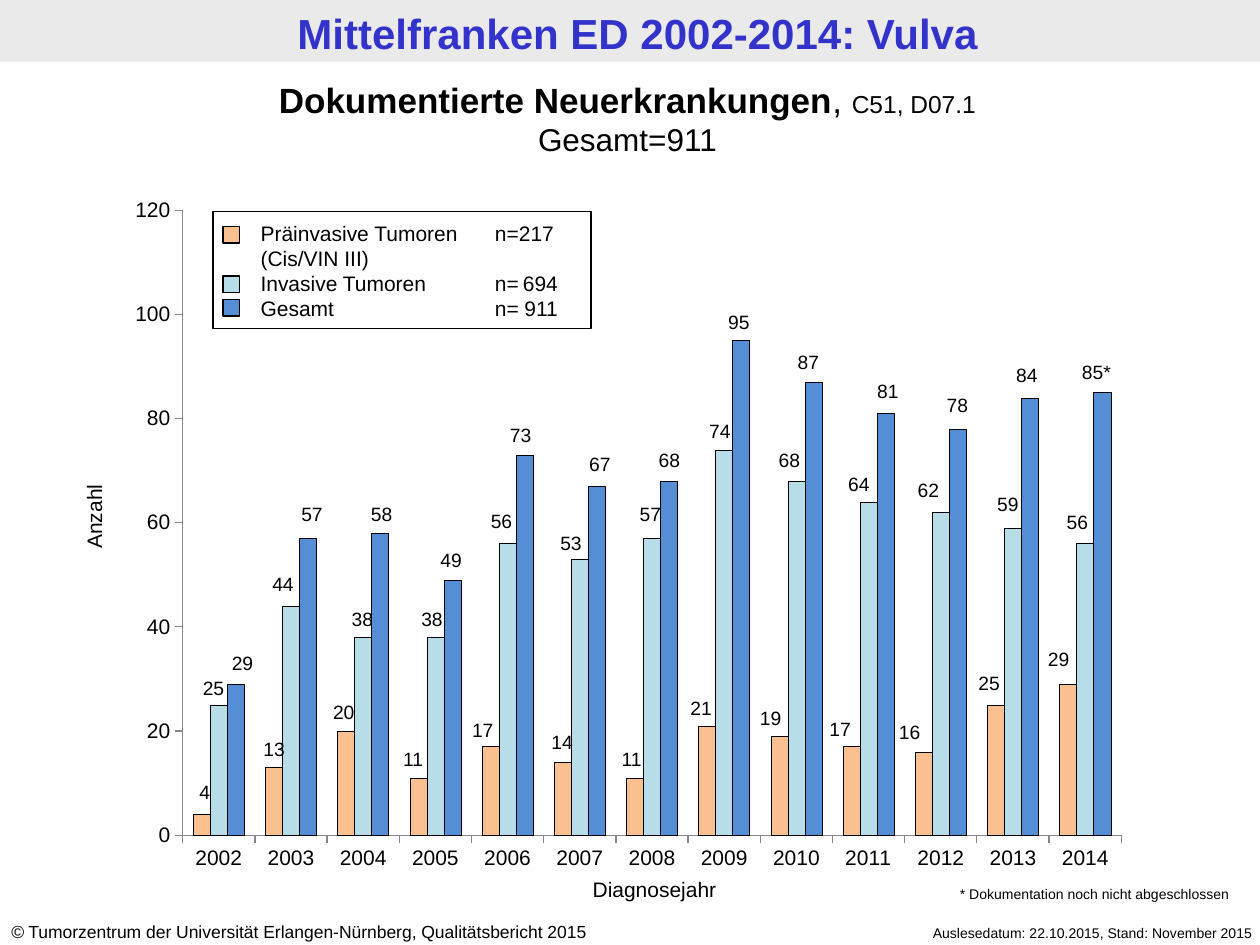
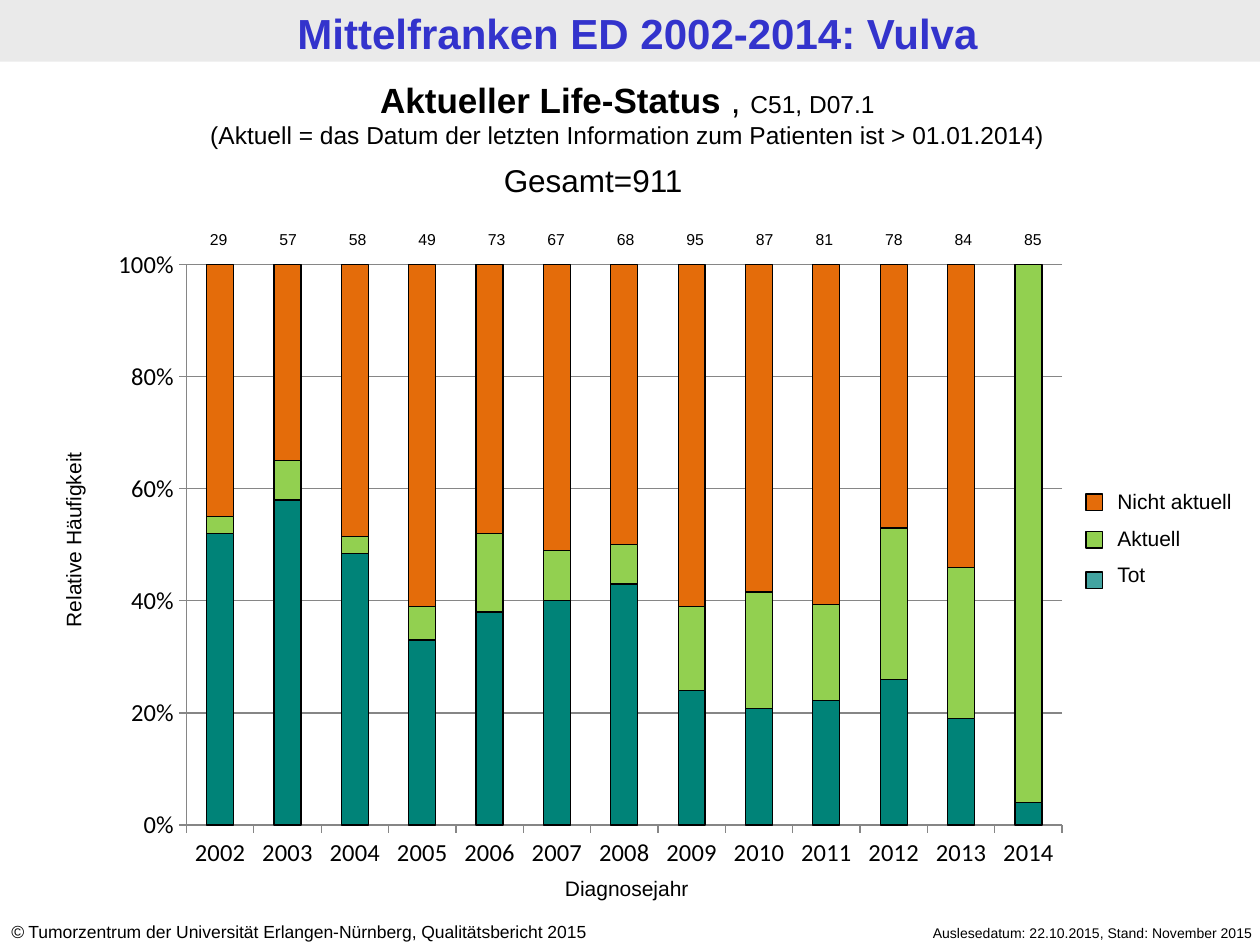
from lxml import etree
from pptx import Presentation
from pptx.chart.data import CategoryChartData
from pptx.dml.color import RGBColor
from pptx.enum.chart import XL_CHART_TYPE, XL_TICK_MARK
from pptx.enum.shapes import MSO_SHAPE
from pptx.enum.text import MSO_ANCHOR, PP_ALIGN
from pptx.oxml import parse_xml
from pptx.oxml.ns import nsdecls, qn
from pptx.util import Inches, Pt

LEFT, MID, RIGHT = PP_ALIGN.LEFT, PP_ALIGN.CENTER, PP_ALIGN.RIGHT
TOP = MSO_ANCHOR.TOP
RECT = MSO_SHAPE.RECTANGLE
GROUPED = XL_CHART_TYPE.COLUMN_CLUSTERED
SHARES = XL_CHART_TYPE.COLUMN_STACKED_100
OUT, NONE = XL_TICK_MARK.OUTSIDE, XL_TICK_MARK.NONE

WIDE, HIGH = 10, 7.5
BLACK, GREY, BAND, BLUE = "000000", "868686", "EAEAEA", "3333CC"
UNIT = 0.0788
MARK = 0.13
YEARS = [str(year) for year in range(2002, 2015)]

TITLE = "Mittelfranken ED 2002-2014: Vulva"
STAND = "Auslesedatum: 22.10.2015, Stand: November 2015"
OWNER = [("©", {"italic": True}),
         (" Tumorzentrum der Universität Erlangen-Nürnberg, Qualitätsbericht 2015", {})]
CODES = [(", ", {"size": 20}), ("C51, D07.1", {"size": 14})]
TOTAL = "Gesamt=911"

CASES = {
    "head": [[("Dokumentierte Neuerkrankungen", {"size": 20, "bold": True})] + CODES, TOTAL],
    "kind": GROUPED,
    "frame": (0.91, 1.47, 8.16, 5.55),
    "plot": (1.45, 1.67, 7.45, 4.96),
    "gap": 124, "lap": 0, "line": 0.25, "font": "Arial", "size": 12,
    "top": 120, "step": 20, "form": "General", "grid": False,
    "rows": [
        ("Präinvasive Tumoren", "FAC090", [4, 13, 20, 11, 17, 14, 11, 21, 19, 17, 16, 25, 29]),
        ("Invasive Tumoren", "B7DEE8", [25, 44, 38, 38, 56, 53, 57, 74, 68, 64, 62, 59, 56]),
        ("Gesamt", "558ED5", [29, 57, 58, 49, 73, 67, 68, 95, 87, 81, 78, 84, 85]),
    ],
}
TAGS = [
    (1.62, [0, 7, 14, 21, 28, 36, 43, 50, 57, 64, 71, 79, 86],
     [6.14, 5.8, 5.51, 5.88, 5.88 - 0.23, 5.75, 5.88, 5.48, 5.56, 5.64, 5.67, 5.28, 5.09]),
    (1.69, [0, 7, 15, 22, 29, 36, 44, 51, 58, 65, 72, 80, 87],
     [5.32, 4.49, 4.77, 4.77, 3.99, 4.17, 3.94, 3.28, 3.51, 3.7, 3.75, 3.86, 4]),
    (1.92, [0, 7, 14, 21, 28, 36, 43, 50, 57, 65, 72, 79, 86],
     [5.12, 3.94, 3.94, 4.3, 3.31, 3.54, 3.51, 2.41, 2.73, 2.96, 3.07, 2.83, 2.81]),
]
KEY = ["Präinvasive Tumoren\tn=\t217 (Cis/VIN III)",
       "Invasive Tumoren \t\tn=\t694",
       "Gesamt\t\tn=\t911"]
TABS = [(1.47, "l"), (1.86, "l"), (2.36, "r"), (4.41, "l")]
KEYTOPS = [1.8, 2.19, 2.38]

STATUS = {
    "head": [[("Aktueller Life-Status ", {"size": 20, "bold": True})] + CODES,
             [("(Aktuell = das Datum der letzten Information zum Patienten ist > 01.01.2014)",
               {"size": 14})]],
    "kind": SHARES,
    "frame": (0.79, 1.87, 7.8, 5.11),
    "plot": (1.48, 2.1, 6.95, 4.45),
    "gap": 150, "lap": 100, "line": 0.75, "font": "Calibri", "size": 14,
    "top": 1, "step": 0.2, "form": "0%", "grid": True,
    "rows": [
        ("Tot", "008378", [52, 58, 48, 33, 38, 40, 43, 24, 21, 22, 26, 19, 4]),
        ("Aktuell", "92D050", [3, 7, 3, 6, 14, 9, 7, 15, 21, 17, 27, 27, 96]),
        ("Nicht aktuell", "E46C0A", [45, 35, 48, 61, 48, 51, 50, 61, 59, 60, 47, 54, 0]),
    ],
}
SUMCOLS = [0, 7, 14, 21, 28, 34, 41, 48, 55, 61, 68, 75, 82]
MARKS = [(3.92, "E46C0A", 100), (4.22, "92D050", 100), (4.54, "008380", 74)]


def paint(color):
    return RGBColor.from_string(color)


def write(frame, text, size=12, color=BLACK, align=LEFT, gap=0, tabs=(), bold=False):
    frame.word_wrap = True
    frame.vertical_anchor = TOP
    paras = text if isinstance(text, list) else [text]
    for i, runs in enumerate(paras):
        para = frame.paragraphs[0] if i == 0 else frame.add_paragraph()
        para.alignment = align
        para.space_before = Pt(gap if i else 0)
        if tabs:
            stops = etree.SubElement(para._p.get_or_add_pPr(), qn("a:tabLst"))
            for place, side in tabs:
                etree.SubElement(stops, qn("a:tab"), pos=str(Inches(place)), algn=side)
        for words, form in [(runs, {})] if isinstance(runs, str) else runs:
            run = para.add_run()
            run.text = words
            font = run.font
            font.name = "Arial"
            font.size = Pt(form.get("size", size))
            font.bold = form.get("bold", bold)
            font.italic = form.get("italic", False)
            font.color.rgb = paint(color)


def place(shape, x, y, w, h):
    shape.left, shape.top, shape.width, shape.height = map(Inches, (x, y, w, h))


def label(slide, text, x, y, w, h, turn=0, **form):
    box = slide.shapes.add_textbox(*map(Inches, (x, y, w, h)))
    box.rotation = turn
    write(box.text_frame, text, **form)
    return box


def block(slide, x, y, w, h, fill=None, line=BLACK, alpha=100):
    shape = slide.shapes.add_shape(RECT, *map(Inches, (x, y, w, h)))
    shape.shadow.inherit = False
    if fill:
        shape.fill.solid()
        shape.fill.fore_color.rgb = paint(fill)
        if alpha < 100:
            tint = shape.element.spPr.find(".//" + qn("a:srgbClr"))
            etree.SubElement(tint, qn("a:alpha"), val=str(alpha * 1000))
    else:
        shape.fill.background()
    if line:
        shape.line.color.rgb = paint(line)
        shape.line.width = Pt(0.75)
    else:
        shape.line.fill.background()
    return shape


def share(slide, master):
    parts = [
        block(slide, 0, 0, WIDE, 0.49, BAND, None),
        label(slide, TITLE, 0.06, 0.01, WIDE, 0.49, size=24, color=BLUE, align=MID, bold=True),
        label(slide, STAND, 6.65, 7.29, 3.39, 0.24, size=8, align=RIGHT),
        label(slide, [OWNER], -0.01, 7.26, 5.24, 0.27, size=10),
    ]
    for i, part in enumerate(parts):
        part.element.nvSpPr.cNvPr.set("id", str(100 + i))
        master.element.cSld.spTree.append(part.element)


def rule(line):
    line.color.rgb = paint(GREY)
    line.width = Pt(0.75)


def graph(slide, data):
    table = CategoryChartData()
    table.categories = YEARS
    for name, _, vals in data["rows"]:
        table.add_series(name, vals)
    x, y, w, h = data["frame"]
    chart = slide.shapes.add_chart(data["kind"], *map(Inches, data["frame"]), table).chart
    chart.has_legend = chart.has_title = False
    chart.font.name, chart.font.size = data["font"], Pt(data["size"])
    chart.font.color.rgb = paint(BLACK)
    plot = chart.plots[0]
    plot.gap_width, plot.overlap = data["gap"], data["lap"]
    plot.vary_by_categories = False
    for bars, (_, color, _) in zip(plot.series, data["rows"]):
        bars.format.fill.solid()
        bars.format.fill.fore_color.rgb = paint(color)
        bars.format.line.color.rgb = paint(BLACK)
        bars.format.line.width = Pt(data["line"])
    scale = chart.value_axis
    scale.minimum_scale, scale.maximum_scale = 0, data["top"]
    scale.major_unit = data["step"]
    scale.has_major_gridlines = data["grid"]
    if data["grid"]:
        rule(scale.major_gridlines.format.line)
    scale.tick_labels.number_format = data["form"]
    scale.tick_labels.number_format_is_linked = False
    for axis in (scale, chart.category_axis):
        axis.major_tick_mark, axis.minor_tick_mark = OUT, NONE
        axis.tick_labels.font.size = Pt(data["size"])
        axis.tick_labels.font.name = data["font"]
        rule(axis.format.line)
    px, py, pw, ph = data["plot"]
    spots = {"x": (px - x) / w, "y": (py - y) / h, "w": pw / w, "h": ph / h}
    inner = "".join(f'<c:{k}Mode val="edge"/>' for k in "xy")
    inner += "".join(f'<c:{k} val="{v:.4f}"/>' for k, v in spots.items())
    area = chart.element.find(".//" + qn("c:plotArea"))
    for old in area.findall(qn("c:layout")):
        area.remove(old)
    area.insert(0, parse_xml(f'<c:layout {nsdecls("c")}><c:manualLayout>'
                             f'<c:layoutTarget val="inner"/>{inner}</c:manualLayout></c:layout>'))


def start(deck, data):
    slide = deck.slides.add_slide(deck.slide_layouts[5])
    place(slide.shapes.title, -0.04, 0.57, 10.04, 0.74)
    write(slide.shapes.title.text_frame, data["head"], size=18, align=MID)
    graph(slide, data)
    return slide


def cases(slide):
    label(slide, "Diagnosejahr", 3.66, 6.91, 3.07, 0.3, align=MID)
    label(slide, "Anzahl", -0.56, 3.95, 2.61, 0.3, turn=270, align=MID)
    label(slide, KEY, 1.97, 1.7, 2.73, 0.91, tabs=TABS)
    block(slide, 1.69, 1.68, 3, 0.93)
    for y, (_, color, _) in zip(KEYTOPS, CASES["rows"]):
        block(slide, 1.77, y, MARK, MARK, color)
    for (x, cols, tops), (_, _, vals) in zip(TAGS, CASES["rows"]):
        for col, y, val in zip(cols, tops, vals):
            text = "85*" if val == 85 else str(val)
            label(slide, text, x + col * UNIT - 0.31, y, 0.63, 0.29, size=11, align=MID)
    label(slide, "* Dokumentation noch nicht abgeschlossen", 7.52, 6.98, 2.7, 0.24, size=8)


def status(slide):
    label(slide, "Relative Häufigkeit", -0.62, 4.13, 2.41, 0.31, turn=270, align=MID)
    label(slide, "Diagnosejahr", 3.85, 6.9, 2.25, 0.31, align=MID)
    for col, val in zip(SUMCOLS, CASES["rows"][2][2]):
        label(slide, str(val), 1.46 + col * UNIT, 1.77, 0.55, 0.25, size=9, align=MID)
    label(slide, TOTAL, 3.9, 1.23, 2.2, 0.4, size=18)
    names = [name for name, _, _ in reversed(STATUS["rows"])]
    label(slide, names, 8.77, 3.83, 1.23, 0.91, gap=6.5)
    for y, color, alpha in MARKS:
        block(slide, 8.62, y, MARK, MARK, color, alpha=alpha)


def main():
    deck = Presentation()
    deck.slide_width, deck.slide_height = Inches(WIDE), Inches(HIGH)
    first = start(deck, CASES)
    share(first, deck.slide_master)
    cases(first)
    status(start(deck, STATUS))
    deck.save("out.pptx")


if __name__ == "__main__":
    main()
